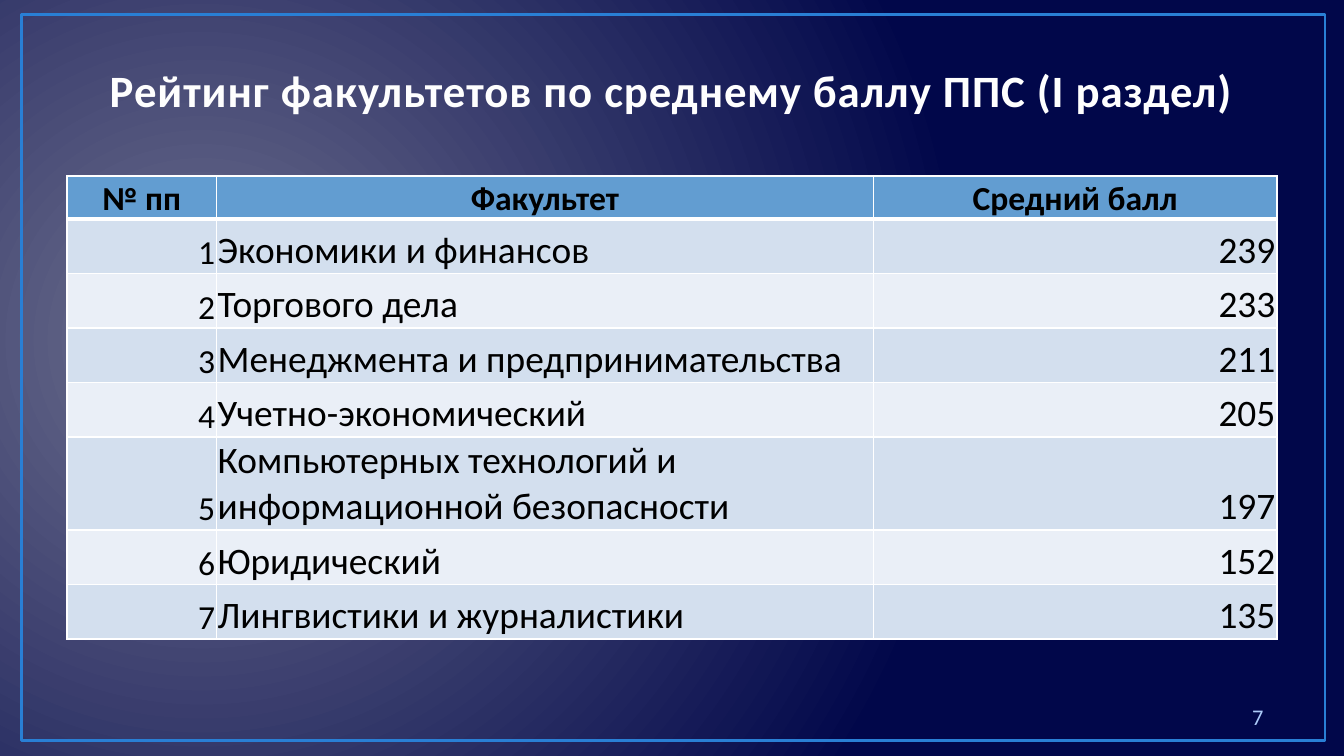
from pptx import Presentation
from pptx.dml.color import RGBColor as RGB
from pptx.enum.shapes import MSO_SHAPE as Shape
from pptx.enum.text import MSO_ANCHOR as Anchor, MSO_AUTO_SIZE as Auto, PP_ALIGN as Align
from pptx.oxml import parse_xml
from pptx.oxml.ns import nsdecls, qn
from pptx.util import Inches, Pt

HUES = {
    "glow": "6E708E", "night": "01074A", "frame": "297FD5",
    "title": "FEFEFE", "edge": "234F77", "page": "ACCBF9",
    "head": "629DD1", "odd": "D3DFEE", "even": "EAEFF7",
    "rule": "FFFFFF", "ink": "000000",
}
HEADS = ["№ пп", "Факультет", "Средний балл"]
SCORES = [
    ("Экономики и финансов", 239),
    ("Торгового дела", 233),
    ("Менеджмента и предпринимательства", 211),
    ("Учетно-экономический", 205),
    ("Компьютерных технологий и информационной безопасности", 197),
    ("Юридический", 152),
    ("Лингвистики и журналистики", 135),
]
WIDTHS = [1.11, 4.89, 3]
ALIGNS = [Align.RIGHT, Align.LEFT, Align.RIGHT]
SIZES = [18, 20, 20]


def hue(name):
    """Return a named colour."""
    return RGB.from_string(HUES[name])


def line_xml(tag, name, width):
    """Return a solid line element with a width in points."""
    return parse_xml(
        f'<a:{tag} {nsdecls("a")} w="{Pt(width)}"><a:solidFill>'
        f'<a:srgbClr val="{HUES[name]}"/></a:solidFill></a:{tag}>')


def add_text(frame, text, size, color, align, bold=False):
    """Write one run into the first paragraph and return it."""
    para = frame.paragraphs[0]
    para.alignment = align
    run = para.add_run()
    run.text = text
    font = run.font
    font.name, font.size, font.bold = "Calibri", Pt(size), bold
    font.color.rgb = hue(color)
    return run


def set_back(slide):
    """Fill the background with a round gradient."""
    slide.background.fill.solid()
    props = slide.element.find(".//" + qn("p:bgPr"))
    props.replace(props[0], parse_xml(
        f'<a:gradFill {nsdecls("a")} rotWithShape="1"><a:gsLst>'
        f'<a:gs pos="0"><a:srgbClr val="{HUES["glow"]}"/></a:gs>'
        f'<a:gs pos="100000"><a:srgbClr val="{HUES["night"]}"/></a:gs>'
        '</a:gsLst><a:path path="circle">'
        '<a:fillToRect l="15000" t="50000" r="85000" b="60000"/>'
        '</a:path></a:gradFill>'))


def add_frame(slide):
    """Draw the border around the slide."""
    box = slide.shapes.add_shape(
        Shape.RECTANGLE, Inches(0.16), Inches(0.11), Inches(9.7), Inches(5.4))
    box.shadow.inherit = False
    box.fill.background()
    box.line.color.rgb = hue("frame")
    box.line.width = Pt(1.5)


def set_title(slide, text):
    """Place and format the title."""
    title = slide.shapes.title
    title.left, title.top = Inches(0.5), Inches(0.45)
    title.width, title.height = Inches(8.99), Inches(0.47)
    frame = title.text_frame
    frame.auto_size, frame.word_wrap = Auto.NONE, True
    frame.vertical_anchor = Anchor.BOTTOM
    run = add_text(frame, text, 24, "title", Align.CENTER, True)
    props = run._r.get_or_add_rPr()
    props.set("spc", "50")
    props.insert(0, line_xml("ln", "edge", 1.05))


def set_cell(cell, text, size, fill, align, head=False):
    """Fill one table cell and rule its sides."""
    cell.margin_left = cell.margin_top = cell.margin_right = Inches(0.01)
    cell.margin_bottom = 0
    cell.vertical_anchor = Anchor.BOTTOM
    add_text(cell.text_frame, text, size, "ink", align, head)
    props = cell._tc.get_or_add_tcPr()
    for tag in ("lnL", "lnR", "lnT", "lnB"):
        props.append(line_xml(tag, "rule", 3 if head and tag == "lnB" else 1))
    cell.fill.solid()
    cell.fill.fore_color.rgb = hue(fill)


def add_grid(slide):
    """Build the table of faculty scores."""
    grid = slide.shapes.add_table(
        len(SCORES) + 1, len(HEADS),
        Inches(0.5), Inches(1.31), Inches(9), Inches(3.16)).table
    for col, width in zip(grid.columns, WIDTHS):
        col.width = Inches(width)
    for row in grid.rows:
        row.height = Inches(2.84) // len(SCORES)
    grid.rows[0].height = Inches(0.32)
    for c, text in enumerate(HEADS):
        set_cell(grid.cell(0, c), text, 18, "head", Align.CENTER, True)
    for r, (name, score) in enumerate(SCORES, 1):
        fill = "odd" if r % 2 else "even"
        for c, value in enumerate((r, name, score)):
            set_cell(grid.cell(r, c), str(value), SIZES[c], fill, ALIGNS[c])


def add_page(slide, text):
    """Add the page number."""
    box = slide.shapes.add_textbox(
        Inches(7.17), Inches(5.18), Inches(2.33), Inches(0.3))
    frame = box.text_frame
    frame.word_wrap = True
    frame.vertical_anchor = Anchor.MIDDLE
    add_text(frame, text, 12, "page", Align.RIGHT)


def main():
    """Build and save the slide."""
    deck = Presentation()
    deck.slide_width = Inches(10)
    deck.slide_height = Inches(10) * 9 // 16
    slide = deck.slides.add_slide(deck.slide_layouts[5])
    set_back(slide)
    add_frame(slide)
    set_title(slide, "Рейтинг факультетов по среднему баллу ППС (I раздел)")
    add_grid(slide)
    add_page(slide, "7")
    deck.save("out.pptx")


if __name__ == "__main__":
    main()
